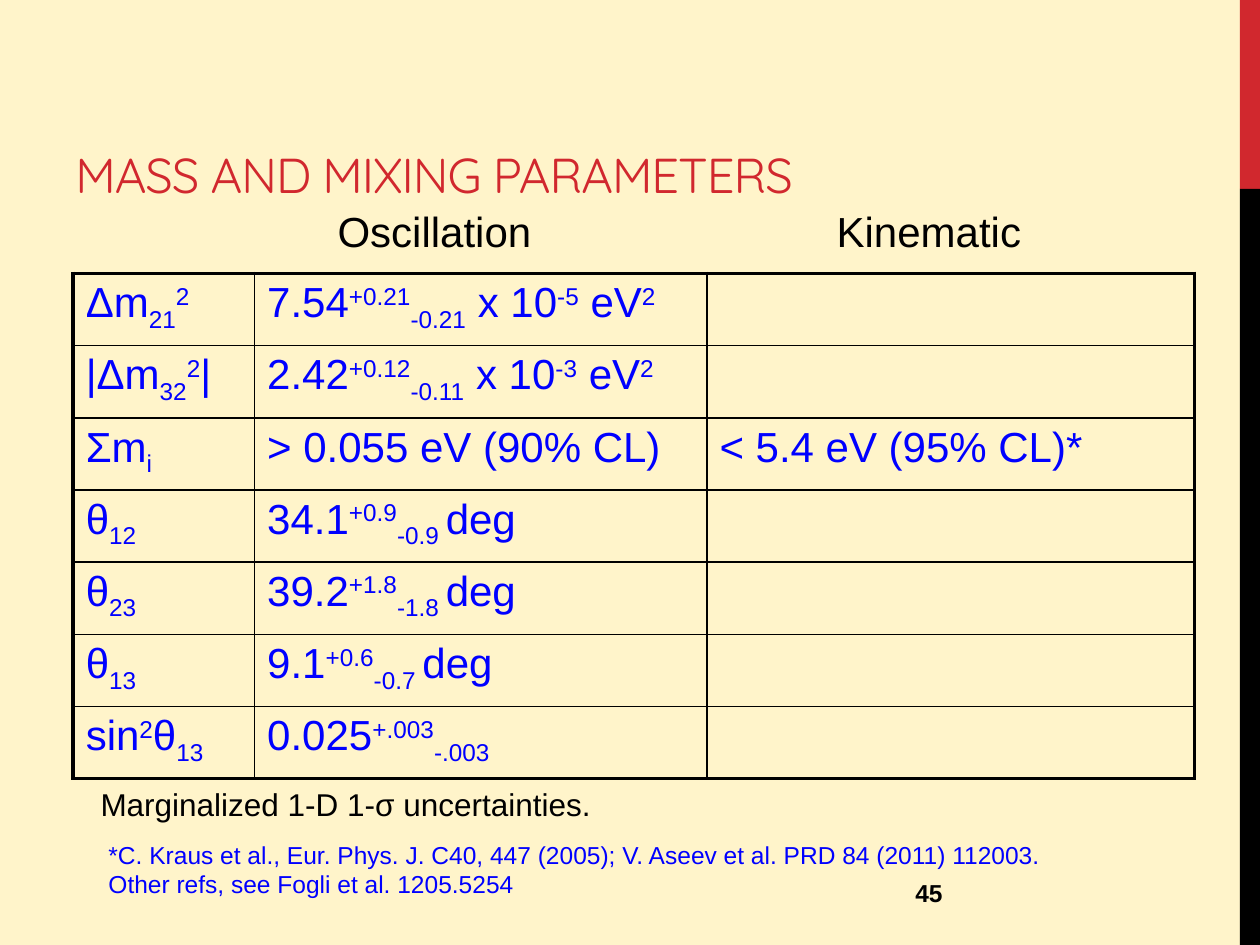
from pptx import Presentation
from pptx.dml.color import RGBColor
from pptx.enum.shapes import MSO_SHAPE
from pptx.enum.text import MSO_ANCHOR, MSO_AUTO_SIZE
from pptx.oxml.ns import qn
from pptx.util import Pt
from lxml.etree import SubElement

THEME = {
    "cream": "FFF4CA", "red": "D1282E", "black": "000000", "blue": "0000FF",
    "body": "Arial", "display": "Quicksand",
    "title": 28, "large": 24, "note": 18, "small": 14,
    "outer": 2.25, "inner": 1,
}
SHIFTS = {"^": 30, "_": -25}

ROWS = [
    [["Δm", "_21", "^2"],
     ["7.54", "^+0.21", "_-0.21", " x 10", "^-5", " eV", "^2"], []],
    [["|Δm", "_32", "^2", "|"],
     ["2.42", "^+0.12", "_-0.11", " x 10", "^-3", " eV", "^2"], []],
    [["Σm", "_i"], ["> 0.055 eV (90% CL)"], ["< 5.4 eV (95% CL)*"]],
    [["θ", "_12"], ["34.1", "^+0.9", "_-0.9 ", "deg"], []],
    [["θ", "_23"], ["39.2", "^+1.8", "_-1.8 ", "deg"], []],
    [["θ", "_13"], ["9.1", "^+0.6", "_-0.7 ", "deg"], []],
    [["sin", "^2", "θ", "_13"], ["0.025", "^+.003", "_-.003"], []],
]
COLUMN_WIDTHS = [103.7, 258.5, 278.6]
ROW_HEIGHT = 41.25
TABLE_LEFT, TABLE_TOP = 41.8, 156.25

BARS = [("red", 0, 108), ("black", 108, 432)]
BAR_LEFT, BAR_WIDTH = 708.5, 11.5

LABELS = [
    (["MASS AND MIXING PARAMETERS"], (36, 12, 456, 108),
     dict(size="title", font="display", color="red", spacing=-60,
          anchor=MSO_ANCHOR.BOTTOM, wrap=True)),
    (["Marginalized 1-D 1-σ uncertainties."], (50.4, 445, 297.4, 29),
     dict(size="note")),
    (["*C. Kraus et al., Eur. Phys. J. C40, 447 (2005); V. Aseev et al. PRD 84 (2011) 112003.",
      "Other refs, see Fogli et al. 1205.5254"], (54.9, 476.5, 561.6, 41),
     dict(size="small", color="blue")),
    (["45"], (516, 492, 150, 36),
     dict(size="small", bold=True, anchor=MSO_ANCHOR.MIDDLE, wrap=True)),
    (["Oscillation"], (185.8, 114, 126, 36), dict(size="large")),
    (["Kinematic"], (471, 114, 121, 36), dict(size="large")),
]


def color_of(name):
    return RGBColor.from_string(THEME[name])


def write(para, text, size="large", font="body", color="black", bold=False,
          spacing=None, shift=None):
    span = para.add_run()
    span.text = text
    span.font.size = Pt(THEME[size])
    span.font.name = THEME[font]
    span.font.bold = bold
    span.font.color.rgb = color_of(color)
    properties = span._r.get_or_add_rPr()
    if spacing is not None:
        properties.set("spc", str(spacing))
    if shift is not None:
        properties.set("baseline", str(shift * 1000))


def add_label(page, lines, place, anchor=MSO_ANCHOR.TOP, wrap=False, **style):
    box = page.shapes.add_textbox(*map(Pt, place))
    frame = box.text_frame
    frame.word_wrap = wrap
    frame.auto_size = MSO_AUTO_SIZE.NONE if wrap else MSO_AUTO_SIZE.SHAPE_TO_FIT_TEXT
    frame.vertical_anchor = anchor
    for index, line in enumerate(lines):
        para = frame.add_paragraph() if index else frame.paragraphs[0]
        write(para, line, **style)


def add_bar(page, color, top, height):
    bar = page.shapes.add_shape(
        MSO_SHAPE.RECTANGLE, Pt(BAR_LEFT), Pt(top), Pt(BAR_WIDTH), Pt(height))
    bar.shadow.inherit = False
    bar.fill.solid()
    bar.fill.fore_color.rgb = color_of(color)
    bar.line.fill.background()


def set_borders(cell, edges):
    properties = cell._tc.get_or_add_tcPr()
    for side, is_outer in edges.items():
        width = Pt(THEME["outer" if is_outer else "inner"])
        line = SubElement(properties, qn(f"a:ln{side}"), w=str(int(width)))
        fill = SubElement(line, qn("a:solidFill"))
        SubElement(fill, qn("a:srgbClr"), val=THEME["black"])


def add_parameter_table(page):
    row_count, column_count = len(ROWS), len(COLUMN_WIDTHS)
    graphic = page.shapes.add_table(
        row_count, column_count, Pt(TABLE_LEFT), Pt(TABLE_TOP),
        Pt(sum(COLUMN_WIDTHS)), Pt(ROW_HEIGHT * row_count))
    table = graphic.table
    table.first_row = table.horz_banding = False
    for column, width in zip(table.columns, COLUMN_WIDTHS):
        column.width = Pt(width)
    for r, values in enumerate(ROWS):
        table.rows[r].height = Pt(ROW_HEIGHT)
        for c, parts in enumerate(values):
            cell = table.cell(r, c)
            set_borders(cell, {"L": c == 0, "R": c == column_count - 1,
                               "T": r == 0, "B": r == row_count - 1})
            cell.fill.background()
            for part in parts:
                shift = SHIFTS.get(part[0])
                write(cell.text_frame.paragraphs[0], part[1:] if shift else part,
                      color="blue", shift=shift)


def main():
    deck = Presentation()
    deck.slide_width, deck.slide_height = Pt(720), Pt(540)
    page = deck.slides.add_slide(deck.slide_layouts[6])
    page.background.fill.solid()
    page.background.fill.fore_color.rgb = color_of("cream")
    for bar in BARS:
        add_bar(page, *bar)
    add_parameter_table(page)
    for lines, place, style in LABELS:
        add_label(page, lines, place, **style)
    deck.save("out.pptx")


if __name__ == "__main__":
    main()
